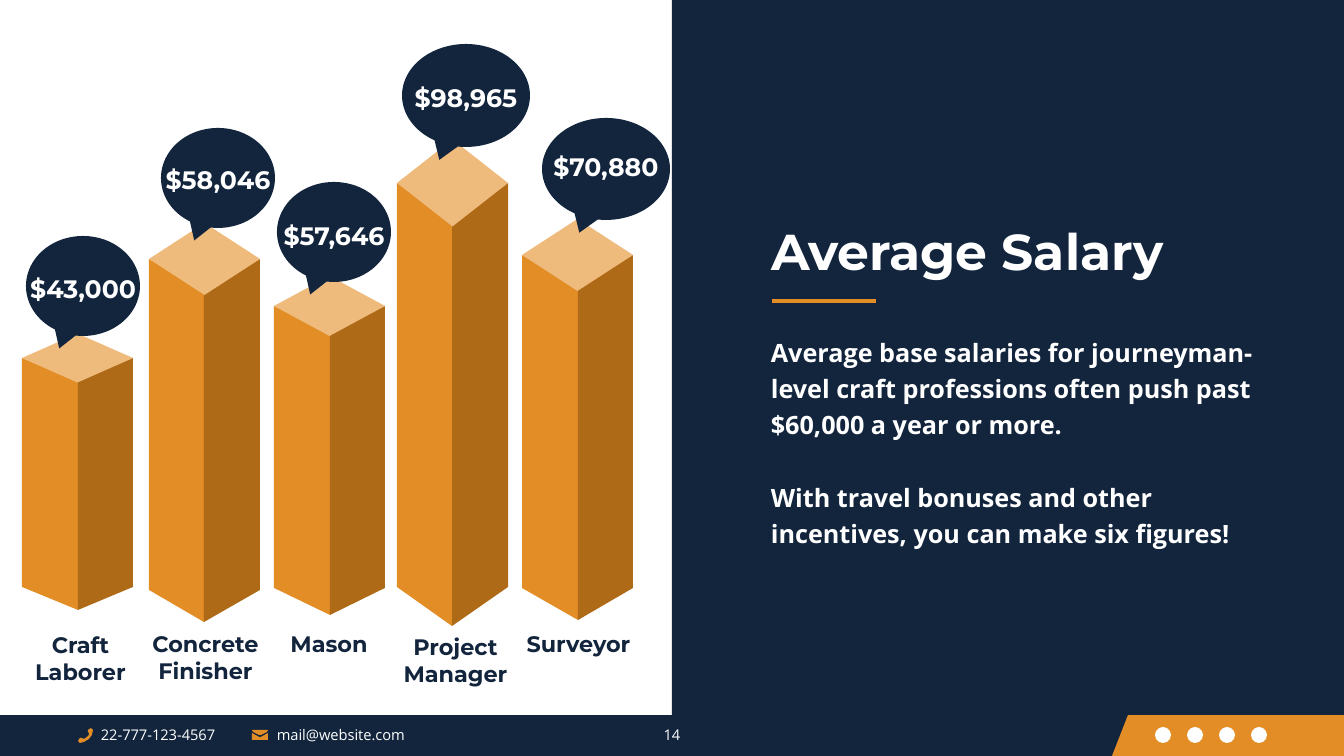
from dataclasses import dataclass

from lxml import etree
from pptx import Presentation
from pptx.dml.color import RGBColor
from pptx.enum.shapes import MSO_CONNECTOR, MSO_SHAPE
from pptx.enum.text import MSO_ANCHOR, MSO_AUTO_SIZE, PP_ALIGN
from pptx.oxml.ns import qn
from pptx.util import Emu, Pt

RECTANGLE, OVAL = MSO_SHAPE.RECTANGLE, MSO_SHAPE.OVAL
DIAMOND, CALLOUT = MSO_SHAPE.DIAMOND, MSO_SHAPE.OVAL_CALLOUT
STRAIGHT = MSO_CONNECTOR.STRAIGHT
LEFT, CENTER = PP_ALIGN.LEFT, PP_ALIGN.CENTER
TOP = MSO_ANCHOR.TOP
NO_FIT = MSO_AUTO_SIZE.NONE

SLIDE_W, SLIDE_H = 1344, 756
EMU_PER_PX = 12192000 / SLIDE_W
FOOTER_TOP = 715
BAR_HALF = 111 / 2
HEADING, BODY = "Montserrat", "Open Sans"
COLORS = {
    "navy": "12253D",
    "orange": "E28D26",
    "brown": "AF6A17",
    "peach": "EEBB7D",
    "white": "FFFFFF",
}


@dataclass
class Box:
    left: float
    top: float
    width: float
    height: float


@dataclass
class Style:
    font: str
    size: float
    color: str
    bold: bool = True
    align: PP_ALIGN = CENTER
    line_spacing: float = 1.0
    space_after: float = 0


@dataclass
class Profession:
    name: list[str]
    salary: str
    left: int
    top: int        # height of the outer top corners
    bottom: int     # lowest point of the front edge
    slope: int      # drop from an outer corner to the front edge
    cap_height: int
    label: Box
    bubble: Box
    salary_top: int


PROFESSIONS = [
    Profession(["Craft", "Laborer"], "$43,000", 22, 358, 610, 23, 49,
               Box(14, 626, 133, 65), Box(26, 236, 114, 100), 262),
    Profession(["Concrete Finisher"], "$58,046", 149, 259, 622, 32, 72,
               Box(139, 625, 133, 65), Box(161, 128, 114, 100), 153),
    Profession(["Mason"], "$57,646", 274, 306, 615, 27, 60,
               Box(266, 625, 126, 37), Box(277, 182, 114, 100), 209),
    Profession(["Project Manager"], "$98,965", 397, 183, 626, 39, 87,
               Box(392, 628, 127, 65), Box(402, 44, 128, 103), 71),
    Profession(["Surveyor"], "$70,880", 522, 255, 620, 32, 72,
               Box(478, 625, 201, 37), Box(542, 118, 128, 102), 140),
]

LABEL = Style(HEADING, 16, "navy")
SALARY = Style(HEADING, 18, "white", line_spacing=1.2)
TITLE = Style(HEADING, 36, "white", align=LEFT)
MESSAGE = Style(BODY, 18, "white", align=LEFT, line_spacing=1.2, space_after=26)
CONTACT = Style(BODY, 10.5, "white", bold=False, align=LEFT)
PAGE_NUMBER = Style(BODY, 10.5, "white", bold=False)

PHONE = [(87, 737), (84, 739), (82, 738), (80, 738), (78, 741), (80, 743),
         (84, 742), (89, 739), (92, 735), (93, 730), (91, 728), (88, 730),
         (88, 732), (89, 733), (89, 735)]
ENVELOPE_FLAP = [(252, 730), (268, 730), (267, 732), (261, 735), (259, 735),
                 (253, 732)]
ENVELOPE_BODY = [(252, 733), (259, 737), (261, 737), (268, 733), (268, 740),
                 (252, 740)]


def px(length: float) -> Emu:
    return Emu(round(length * EMU_PER_PX))


def rgb(color: str) -> RGBColor:
    return RGBColor.from_string(COLORS[color])


def paint(shape, color: str):
    shape.shadow.inherit = False
    shape.fill.solid()
    shape.fill.fore_color.rgb = rgb(color)
    shape.line.fill.background()
    return shape


def place(shape, box: Box) -> None:
    shape.left, shape.top = px(box.left), px(box.top)
    shape.width, shape.height = px(box.width), px(box.height)


def add_preset(slide, kind: MSO_SHAPE, box: Box, color: str):
    shape = slide.shapes.add_shape(kind, 0, 0, 0, 0)
    place(shape, box)
    return paint(shape, color)


def add_polygon(slide, points: list[tuple[float, float]], color: str) -> None:
    builder = slide.shapes.build_freeform(*points[0], scale=EMU_PER_PX)
    builder.add_line_segments(points[1:], close=True)
    paint(builder.convert_to_shape(), color)


def write(frame, lines: list[str], style: Style, wrap: bool = True) -> None:
    frame.word_wrap = wrap
    frame.auto_size = NO_FIT
    frame.vertical_anchor = TOP
    for index, line in enumerate(lines):
        paragraph = frame.add_paragraph() if index else frame.paragraphs[0]
        paragraph.text = line
        paragraph.alignment = style.align
        paragraph.line_spacing = style.line_spacing
        paragraph.space_after = Pt(style.space_after)
        font = paragraph.font
        font.name, font.size, font.bold = style.font, Pt(style.size), style.bold
        font.color.rgb = rgb(style.color)


def add_text(slide, box: Box, lines: list[str], style: Style,
             wrap: bool = True) -> None:
    text_box = slide.shapes.add_textbox(0, 0, 0, 0)
    place(text_box, box)
    write(text_box.text_frame, lines, style, wrap)


def add_footer(slide) -> None:
    height = SLIDE_H - FOOTER_TOP
    add_preset(slide, RECTANGLE, Box(0, FOOTER_TOP, SLIDE_W, height), "navy")
    add_polygon(slide, [(1128, FOOTER_TOP), (SLIDE_W, FOOTER_TOP),
                        (SLIDE_W, SLIDE_H), (1112, SLIDE_H)], "orange")
    for icon in (PHONE, ENVELOPE_FLAP, ENVELOPE_BODY):
        add_polygon(slide, icon, "orange")
    add_text(slide, Box(91, 721, 142, 28), ["22-777-123-4567"], CONTACT, False)
    add_text(slide, Box(267, 721, 152, 28), ["mail@website.com"], CONTACT, False)
    add_text(slide, Box(639, 721, 66, 29), ["14"], PAGE_NUMBER)
    for index in range(4):
        add_preset(slide, OVAL, Box(1155 + 32 * index, 727, 16, 16), "white")


def add_message(slide) -> None:
    title = slide.shapes.title
    panel = add_preset(slide, RECTANGLE,
                       Box(SLIDE_W / 2, 0, SLIDE_W / 2, FOOTER_TOP), "navy")
    title.element.addprevious(panel.element)
    place(title, Box(761, 215, 482, 72))
    write(title.text_frame, ["Average Salary"], TITLE)

    underline = slide.shapes.add_connector(STRAIGHT, px(772), px(301),
                                           px(876), px(301))
    underline.line.color.rgb = rgb("orange")
    underline.line.width = Pt(2.25)
    etree.SubElement(underline.element.spPr, qn("a:effectLst"))

    add_text(slide, Box(761, 326, 506, 228), [
        "Average base salaries for journeyman-level craft professions often "
        "push past $60,000 a year or more.",
        "With travel bonuses and other incentives, you can make six figures!",
    ], MESSAGE)


def add_bar(slide, job: Profession) -> None:
    front = job.left + BAR_HALF
    for outer, color in ((job.left, "orange"), (front + BAR_HALF, "brown")):
        add_polygon(slide, [(outer, job.top), (front, job.top + job.slope),
                            (front, job.bottom), (outer, job.bottom - job.slope)],
                    color)
    add_preset(slide, DIAMOND, Box(job.left, job.top - job.cap_height / 2,
                                   2 * BAR_HALF, job.cap_height), "peach")
    add_text(slide, job.label, job.name, LABEL)


def add_salary(slide, job: Profession) -> None:
    bubble = job.bubble
    add_preset(slide, CALLOUT, bubble, "navy")
    add_text(slide, Box(bubble.left - 16, job.salary_top, bubble.width + 32, 40),
             [job.salary], SALARY)


def main() -> None:
    deck = Presentation()
    deck.slide_width, deck.slide_height = px(SLIDE_W), px(SLIDE_H)
    slide = deck.slides.add_slide(deck.slide_layouts[5])
    add_footer(slide)
    add_message(slide)
    for job in PROFESSIONS:
        add_bar(slide, job)
    for job in PROFESSIONS:
        add_salary(slide, job)
    deck.save("out.pptx")


if __name__ == "__main__":
    main()
